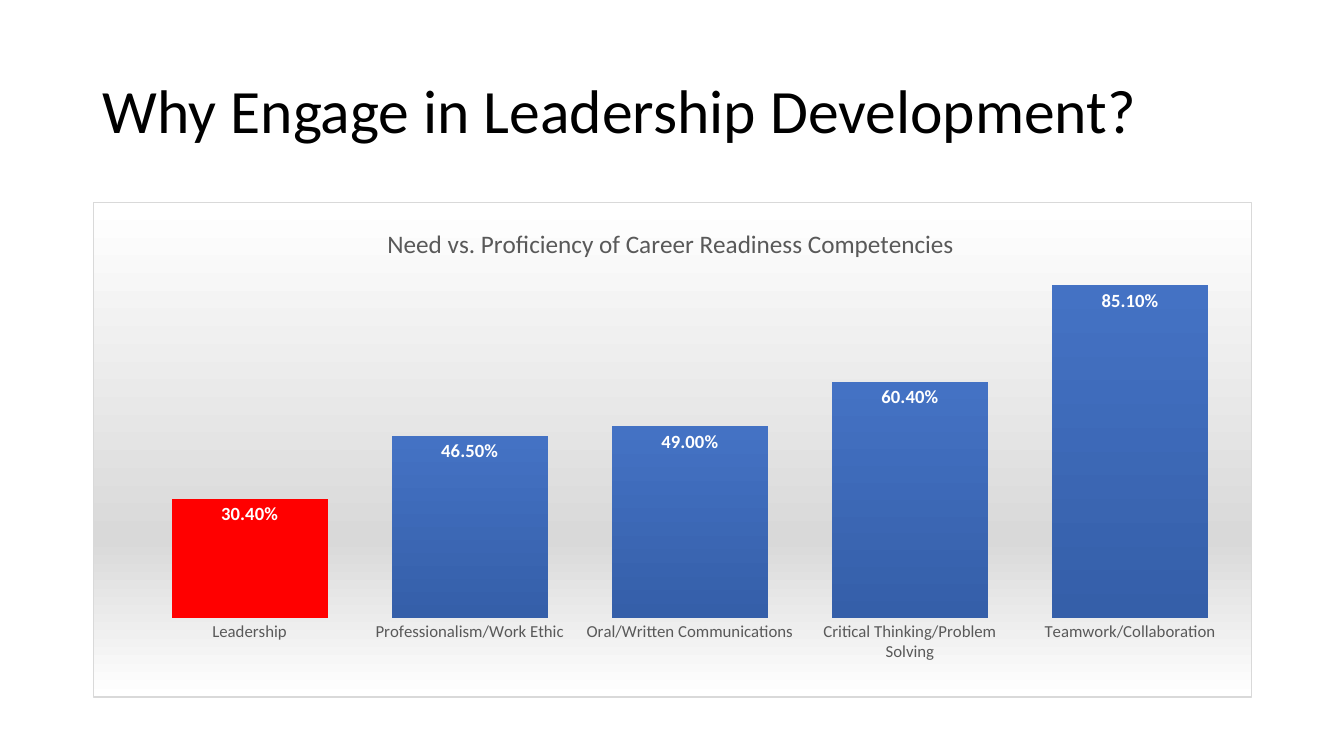
from lxml import etree
from pptx import Presentation
from pptx.chart.data import CategoryChartData
from pptx.dml.color import RGBColor
from pptx.enum.chart import XL_CHART_TYPE, XL_LABEL_POSITION, XL_TICK_MARK
from pptx.enum.text import MSO_ANCHOR, PP_ALIGN
from pptx.oxml import parse_xml
from pptx.oxml.ns import nsdecls, qn
from pptx.util import Inches, Pt

COLUMN = XL_CHART_TYPE.COLUMN_CLUSTERED
INSIDE_END = XL_LABEL_POSITION.INSIDE_END
NO_TICK = XL_TICK_MARK.NONE
MIDDLE = MSO_ANCHOR.MIDDLE
LEFT = PP_ALIGN.LEFT

FONT = "Calibri"
COLORS = {
    "black": "000000",
    "white": "FFFFFF",
    "gray_text": "595959",
    "gray": "D9D9D9",
    "blue": "4472C4",
    "dark_blue": "355FA9",
    "red": "FF0000",
}
COMPETENCIES = {
    "Leadership": 0.304,
    "Professionalism/Work Ethic": 0.465,
    "Oral/Written Communications": 0.49,
    "Critical Thinking/Problem Solving": 0.604,
    "Teamwork/Collaboration": 0.851,
}


def format_font(font, size, color, bold=False):
    font.name = FONT
    font.size = Pt(size)
    font.bold = bold
    font.color.rgb = RGBColor.from_string(COLORS[color])


def write_text(text_frame, text, size, color, alignment=None, line_spacing=None):
    text_frame.text = text
    paragraph = text_frame.paragraphs[0]
    paragraph.alignment = alignment
    paragraph.line_spacing = line_spacing
    format_font(paragraph.runs[0].font, size, color)


def gradient_fill(stops):
    """Return a top-to-bottom gradient from (percent, color name) pairs."""
    stop_xml = "".join(
        f'<a:gs pos="{percent * 1000}"><a:srgbClr val="{COLORS[color]}"/></a:gs>'
        for percent, color in stops
    )
    return parse_xml(
        f'<a:gradFill {nsdecls("a")} rotWithShape="1"><a:gsLst>{stop_xml}</a:gsLst>'
        '<a:lin ang="5400000" scaled="0"/></a:gradFill>'
    )


def set_layout(element, following_tag, target=None, **fractions):
    """Place a chart part by fractions of the chart's size."""
    for old_layout in element.findall(qn("c:layout")):
        element.remove(old_layout)
    layout = etree.Element(qn("c:layout"))
    manual = etree.SubElement(layout, qn("c:manualLayout"))
    if target:
        etree.SubElement(manual, qn("c:layoutTarget"), val=target)
    for mode in ("xMode", "yMode"):
        etree.SubElement(manual, qn(f"c:{mode}"), val="edge")
    for name, fraction in fractions.items():
        etree.SubElement(manual, qn(f"c:{name}"), val=str(fraction))
    element.find(qn(following_tag)).addprevious(layout)


def add_title(slide):
    title = slide.shapes.title
    title.left, title.top = Inches(0.92), Inches(0.4)
    title.width, title.height = Inches(11.5), Inches(1.45)
    title.text_frame.vertical_anchor = MIDDLE
    write_text(title.text_frame, "Why Engage in Leadership Development?", 44, "black",
               alignment=LEFT, line_spacing=0.9)


def format_chart_area(chart):
    area = parse_xml(
        f'<c:spPr {nsdecls("c", "a")}><a:ln w="9525"><a:solidFill>'
        f'<a:srgbClr val="{COLORS["gray"]}"/></a:solidFill></a:ln></c:spPr>'
    )
    area.insert(0, gradient_fill([(0, "white"), (68, "gray"), (100, "white")]))
    chart.element.find(qn("c:chart")).addnext(area)


def format_axes(chart):
    category_axis = chart.category_axis
    category_axis.major_tick_mark = NO_TICK
    category_axis.format.line.fill.background()
    format_font(category_axis.tick_labels.font, 12, "gray_text")
    value_axis = chart.value_axis
    value_axis.minimum_scale, value_axis.maximum_scale = 0, 0.9
    value_axis.has_major_gridlines = False
    value_axis.visible = False


def format_columns(plot):
    plot.gap_width = 41
    plot.vary_by_categories = False
    series = plot.series[0]
    series.format.fill.background()
    properties = series.format.fill._xPr
    properties.replace(properties.find(qn("a:noFill")),
                       gradient_fill([(0, "blue"), (100, "dark_blue")]))
    leadership_fill = series.points[0].format.fill
    leadership_fill.solid()
    leadership_fill.fore_color.rgb = RGBColor.from_string(COLORS["red"])
    labels = series.data_labels
    labels.show_value = True
    labels.position = INSIDE_END
    labels.number_format = "0.00%"
    labels.number_format_is_linked = False
    format_font(labels.font, 13.3, "white", bold=True)


def add_competency_chart(slide):
    data = CategoryChartData(number_format="0.00%")
    data.categories = list(COMPETENCIES)
    data.add_series("Series 1", list(COMPETENCIES.values()))
    chart = slide.shapes.add_chart(
        COLUMN, Inches(0.92), Inches(2), Inches(11.5), Inches(4.92), data
    ).chart
    format_font(chart.font, 10, "black")
    chart.has_legend = False

    # Heading inside the chart
    heading = chart.chart_title
    write_text(heading.text_frame,
               "Need vs. Proficiency of Career Readiness Competencies", 18, "gray_text")
    set_layout(heading.element, "c:overlay", x=0.25, y=0.04)

    # Columns, axes and background
    format_columns(chart.plots[0])
    format_axes(chart)
    format_chart_area(chart)
    plot_area = chart.element.find(f'{qn("c:chart")}/{qn("c:plotArea")}')
    set_layout(plot_area, "c:barChart", target="inner", x=0.04, y=0.13, w=0.95, h=0.71)


def main():
    presentation = Presentation()
    presentation.slide_width = Inches(13.33)
    presentation.slide_height = Inches(7.5)
    slide = presentation.slides.add_slide(presentation.slide_layouts[5])
    add_title(slide)
    add_competency_chart(slide)
    presentation.save("out.pptx")


if __name__ == "__main__":
    main()
